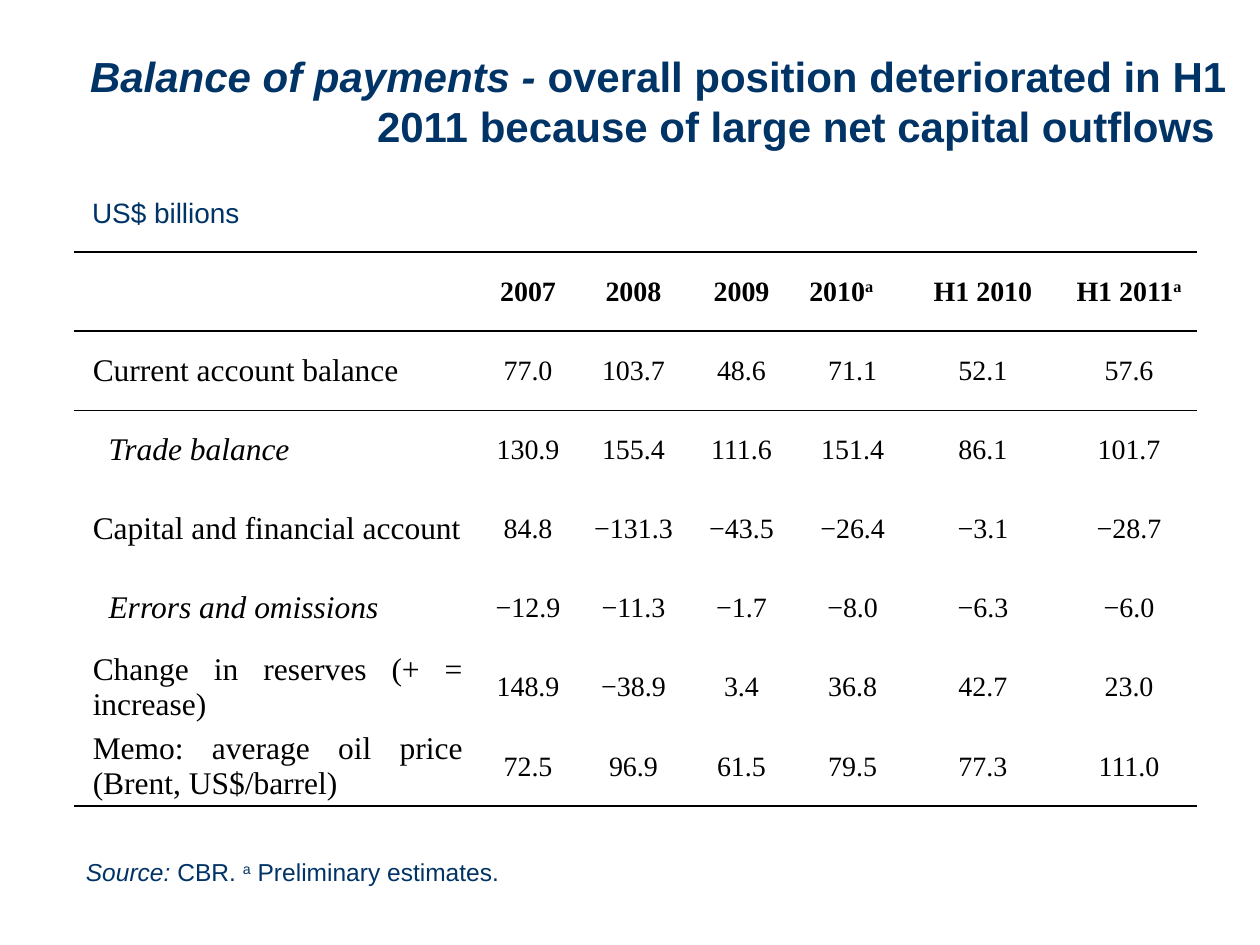
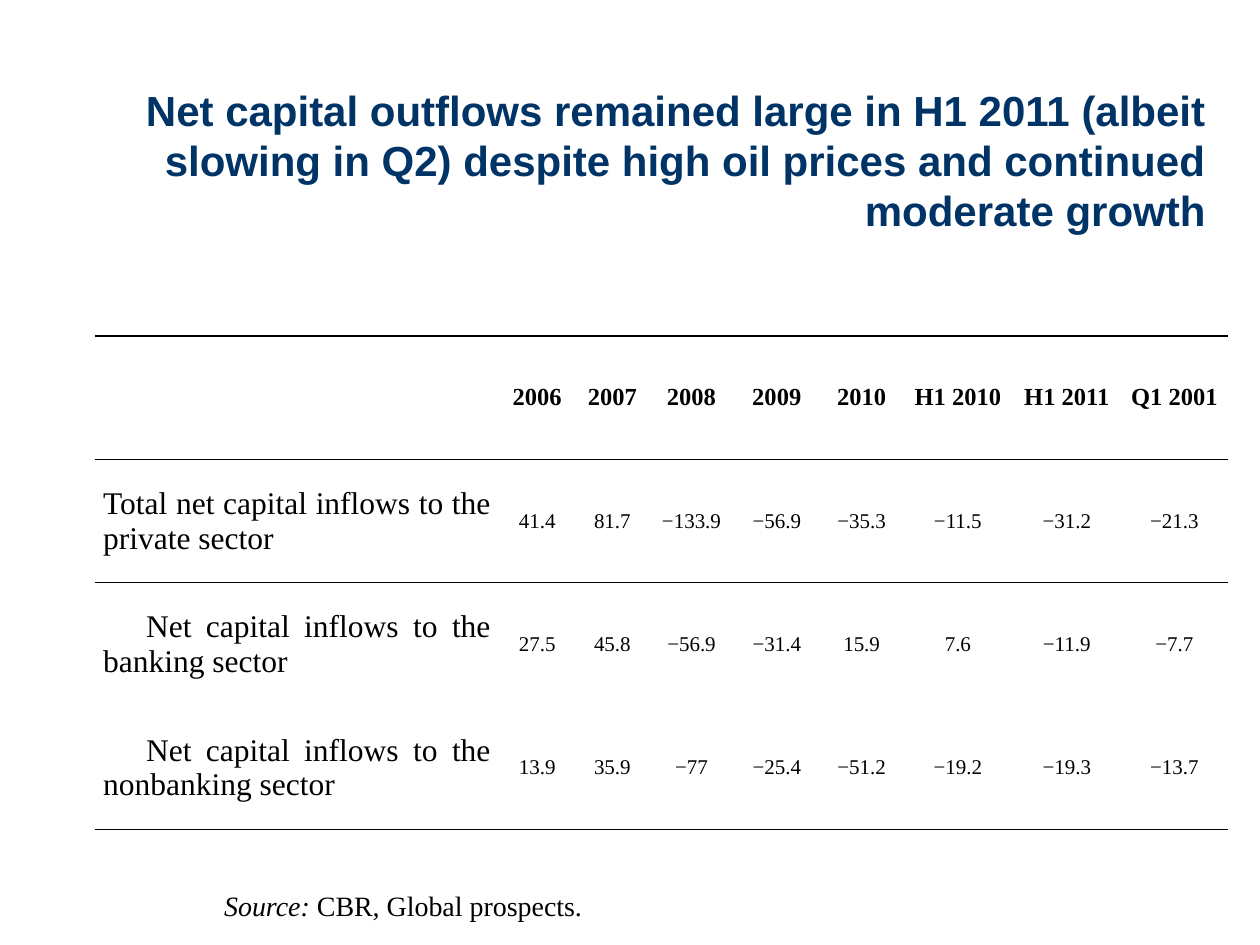
import pptx
import pptx.util
import pptx.dml.color
import pptx.enum.text
import pptx.oxml
import pptx.oxml.ns

Pt = pptx.util.Pt
ALIGN = pptx.enum.text.PP_ALIGN
ANCHOR = pptx.enum.text.MSO_ANCHOR

NAVY = pptx.dml.color.RGBColor(0x00, 0x33, 0x66)
BLACK = pptx.dml.color.RGBColor(0, 0, 0)
WHITE = pptx.dml.color.RGBColor(0xFF, 0xFF, 0xFF)
SANS, SERIF = "Arial", "Times New Roman"
NO_GRID_STYLE = "{2D5ABB26-0587-4C30-8999-92F81FD0307C}"

# Each run is (text, style); style is "", "i" for italic or "sup" for superscript
BALANCE_HEADER = [
    [("2007", "")], [("2008", "")], [("2009", "")], [("2010", ""), ("a", "sup")],
    [("H1 2010", "")], [("H1 2011", ""), ("a", "sup")],
]
# Each row is (label, label style, first-line indent, values)
BALANCE_ROWS = [
    ("Current account balance", "", 0, "77.0 103.7 48.6 71.1 52.1 57.6"),
    ("Trade balance", "i", 9, "130.9 155.4 111.6 151.4 86.1 101.7"),
    ("Capital and financial account", "", 0, "84.8 −131.3 −43.5 −26.4 −3.1 −28.7"),
    ("Errors and omissions", "i", 9, "−12.9 −11.3 −1.7 −8.0 −6.3 −6.0"),
    ("Change in reserves (+ = increase)", "", 0, "148.9 −38.9 3.4 36.8 42.7 23.0"),
    ("Memo: average oil price (Brent, US$/barrel)", "", 0, "72.5 96.9 61.5 79.5 77.3 111.0"),
]
FLOWS_HEADER = [[(period, "")] for period in (
    "2006", "2007", "2008", "2009", "2010", "H1 2010", "H1 2011", "Q1 2001")]
FLOWS_ROWS = [
    ("Total net capital inflows to the private sector", "", 0,
     "41.4 81.7 −133.9 −56.9 −35.3 −11.5 −31.2 −21.3"),
    ("Net capital inflows to the banking sector", "", 24.5,
     "27.5 45.8 −56.9 −31.4 15.9 7.6 −11.9 −7.7"),
    ("Net capital inflows to the nonbanking sector", "", 24.5,
     "13.9 35.9 −77 −25.4 −51.2 −19.2 −19.3 −13.7"),
]


def write(p, runs, size, font, color, align, bold=False):
    p.alignment = align
    for text, style in runs:
        r = p.add_run()
        r.text = text
        r.font.name, r.font.size = font, Pt(size)
        r.font.color.rgb = color
        r.font.bold, r.font.italic = bold, style == "i"
        if style == "sup":
            r.font._element.set("baseline", "30000")


def add_text(slide, box, runs, size, font, color, align,
             bold=False, anchor=ANCHOR.TOP, wrap=True, grow=True):
    sp = slide.shapes.add_textbox(*map(Pt, box))
    tf = sp.text_frame
    tf.word_wrap, tf.vertical_anchor = wrap, anchor
    fit = pptx.enum.text.MSO_AUTO_SIZE
    tf.auto_size = fit.SHAPE_TO_FIT_TEXT if grow else fit.NONE
    write(tf.paragraphs[0], runs, size, font, color, align, bold)


def add_title(slide, box, runs):
    add_text(slide, box, runs, 24, SANS, NAVY, ALIGN.RIGHT,
             bold=True, anchor=ANCHOR.BOTTOM, grow=False)


def set_rules(cell, sides):
    """Draw 1 pt black rules on the given sides, T and/or B, of a cell."""
    tcPr = cell._tc.get_or_add_tcPr()
    for i, side in enumerate(sides):
        tcPr.insert(i, pptx.oxml.parse_xml(
            f'<a:ln{side} {pptx.oxml.ns.nsdecls("a")} w="{Pt(1)}"><a:solidFill>'
            f'<a:srgbClr val="{BLACK}"/></a:solidFill></a:ln{side}>'))


def add_figures_table(slide, box, widths, header, rows, header_size, value_size, margin):
    n_rows, n_cols = len(rows) + 1, len(header) + 1
    frame = slide.shapes.add_table(n_rows, n_cols, *map(Pt, box))
    table = frame.table
    table.first_row = table.horz_banding = False
    table._tbl.tblPr.find(pptx.oxml.ns.qn("a:tableStyleId")).text = NO_GRID_STYLE
    for col, width in zip(table.columns, widths):
        col.width = Pt(width)
    for row in table.rows:
        row.height = Pt(box[3] / n_rows)

    # Plain white cells, ruled around the header and under the last row
    for i in range(n_rows):
        sides = {0: "TB", 1: "T", n_rows - 1: "B"}.get(i, "")
        for j in range(n_cols):
            cell = table.cell(i, j)
            cell.fill.solid()
            cell.fill.fore_color.rgb = WHITE
            cell.vertical_anchor = ANCHOR.MIDDLE
            cell.margin_left = cell.margin_right = Pt(5)
            cell.margin_top = cell.margin_bottom = 0
            set_rules(cell, sides)

    def fill_cell(i, j, runs, size, align, bold=False, indent=0):
        p = table.cell(i, j).text_frame.paragraphs[0]
        pPr = p._p.get_or_add_pPr()
        pPr.set("marL", str(Pt(margin)))
        pPr.set("indent", str(Pt(indent)))
        write(p, runs, size, SERIF, BLACK, align, bold)

    # Header periods; a footnoted single year sits at the left of its column
    for j, runs in enumerate(header, 1):
        noted_year = len(runs) > 1 and runs[0][0].isdigit()
        fill_cell(0, j, runs, header_size, ALIGN.JUSTIFY if noted_year else ALIGN.CENTER, True)
    # Labels and values
    for i, (label, style, indent, values) in enumerate(rows, 1):
        fill_cell(i, 0, [(label, style)], 18, ALIGN.JUSTIFY, indent=indent)
        for j, value in enumerate(values.split(), 1):
            fill_cell(i, j, [(value, "")], value_size, ALIGN.CENTER)


def balance_slide(slide):
    add_title(slide, (0, 0, 708, 90), [
        ("Balance of payments - ", "i"),
        ("overall position deteriorated in H1 2011 because of large net capital outflows ", "")])
    add_text(slide, (42, 486, 582, 24.5),
             [("Source: ", "i"), ("CBR. ", ""), ("a", "sup"), (" Preliminary estimates.", "")],
             14, SANS, NAVY, ALIGN.JUSTIFY, anchor=ANCHOR.MIDDLE)
    add_figures_table(slide, (42, 144, 642, 316.8),
                      (227.5, 58.5, 62, 61.5, 65.5, 83.5, 83.5),
                      BALANCE_HEADER, BALANCE_ROWS, 16, 16, margin=6)
    add_text(slide, (44.5, 108, 99.5, 26.5), [("US$ billions", "")],
             16, SANS, NAVY, ALIGN.RIGHT, wrap=False)


def flows_slide(slide):
    add_title(slide, (36, 72, 660, 66), [
        ("Net capital outflows remained large in H1 2011 (albeit slowing in Q2) "
         "despite high oil prices and continued moderate growth", "")])
    add_text(slide, (121, 504, 263, 26.5),
             [("Source: ", "i"), ("CBR, Global prospects. ", "")],
             16, SERIF, BLACK, ALIGN.JUSTIFY)
    add_figures_table(slide, (54, 192, 648, 282),
                      (231.5, 43, 43, 47.5, 50, 47, 63, 61.5, 61.5),
                      FLOWS_HEADER, FLOWS_ROWS, 14, 12, margin=0)


def main():
    prs = pptx.Presentation()
    prs.slide_width, prs.slide_height = Pt(720), Pt(540)
    for build in (balance_slide, flows_slide):
        build(prs.slides.add_slide(prs.slide_layouts[6]))
    prs.save("out.pptx")


if __name__ == "__main__":
    main()
